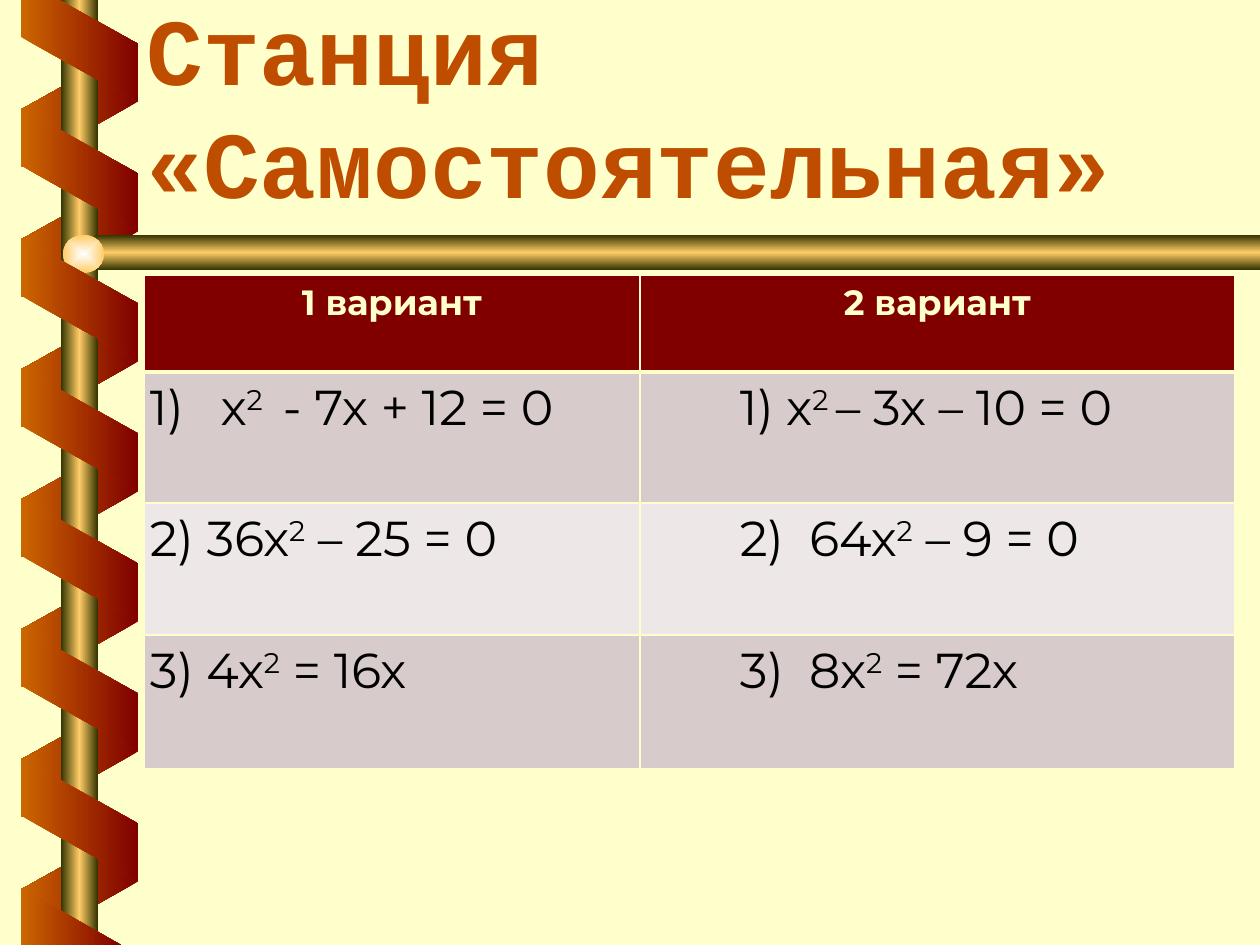
from lxml import etree
from pptx import Presentation
from pptx.dml.color import RGBColor
from pptx.enum.shapes import MSO_SHAPE as SHAPE
from pptx.enum.text import MSO_ANCHOR, MSO_AUTO_SIZE, PP_ALIGN
from pptx.oxml import parse_xml
from pptx.oxml.ns import nsdecls, qn
from pptx.util import Pt

CREAM = RGBColor(0xFF, 0xFF, 0xCC)
RUST = RGBColor(0xBF, 0x4D, 0x00)
MAROON = RGBColor(0x80, 0x00, 0x00)
ORANGE = RGBColor(0xCC, 0x66, 0x00)
OLIVE = RGBColor(0x33, 0x33, 0x00)
GOLD = RGBColor(0xFF, 0xCC, 0x66)
WHITE = RGBColor(0xFE, 0xFF, 0xFF)
BLACK = RGBColor(0x00, 0x00, 0x00)
MAUVE = RGBColor(0xD8, 0xCB, 0xCB)
PALE = RGBColor(0xED, 0xE7, 0xE7)

HEADINGS = ("1 вариант", "2 вариант")
# Text between carets is superscript.
EQUATIONS = (
    ("х^2 ^ - 7х + 12 = 0", "1) х^2 ^– 3х – 10 = 0"),
    ("2) 36х^2^ – 25 = 0", "2)  64х^2^ – 9 = 0"),
    ("3) 4х^2^ = 16х", "3)  8х^2^ = 72х"),
)


def px(length):
    return round(length * 914400 / 126)


def write(paragraph, text, font="Montserrat", size=28, color=BLACK,
          bold=False, align=PP_ALIGN.LEFT):
    paragraph.alignment = align
    for index, part in enumerate(text.split("^")):
        run = paragraph.add_run()
        run.text = part
        run.font.name = font
        run.font.size = Pt(size)
        run.font.bold = bold
        run.font.color.rgb = color
        if index % 2:
            run.font._element.set("baseline", "30000")


def paint(shape, colors, angle=0, radial=False):
    """Fill a shape with an evenly spaced gradient and no outline."""
    shape.shadow.inherit = False
    shape.line.fill.background()
    step = 100000 // (len(colors) - 1)
    stops = "".join(
        f'<a:gs pos="{i * step}"><a:srgbClr val="{color}"/></a:gs>'
        for i, color in enumerate(colors))
    if radial:
        course = ('<a:path path="shape"><a:fillToRect l="50000" t="50000" '
                  'r="50000" b="50000"/></a:path>')
    else:
        course = f'<a:lin ang="{angle * 60000}" scaled="1"/>'
    gradient = parse_xml(
        f'<a:gradFill {nsdecls("a")} rotWithShape="0">'
        f'<a:gsLst>{stops}</a:gsLst>{course}</a:gradFill>')
    shape._element.spPr.find(qn("a:ln")).addprevious(gradient)


def add_part(shapes, kind, box, colors, rotation=0, flip=False, adjust=None,
             **gradient):
    part = shapes.add_shape(kind, *map(px, box))
    part.rotation = rotation
    if flip:
        part._element.spPr.find(qn("a:xfrm")).set("flipH", "1")
    if adjust is not None:
        part.adjustments[0] = adjust
    paint(part, colors, **gradient)


def add_ribbon_end(shapes, points):
    start, *rest = [(px(x), px(y)) for x, y in points]
    builder = shapes.build_freeform(*start)
    builder.add_line_segments(rest)
    paint(builder.convert_to_shape(), (ORANGE, MAROON))


def add_spiral(shapes, left, top, height):
    """Draw the ribbon wound around the vertical rod, with the crossbar."""
    band_w, band_h, pitch = 123, 117, 130
    for turn in range(7):
        add_part(shapes, SHAPE.PARALLELOGRAM,
                 (left, top + 47 + turn * pitch, band_w, band_h),
                 (MAROON, ORANGE), rotation=90, flip=True, adjust=0.56)
    rod = (OLIVE, GOLD, OLIVE)
    add_part(shapes, SHAPE.RECTANGLE, (left + 43, top, 37, height), rod)
    add_part(shapes, SHAPE.PENTAGON, (left + 58, top + 235, 1184, 35), rod,
             flip=True, adjust=0.59, angle=90)
    add_part(shapes, SHAPE.OVAL, (left + 45, top + 235, 41, 38),
             (WHITE, GOLD), radial=True)
    for turn in range(6):
        add_part(shapes, SHAPE.PARALLELOGRAM,
                 (left, top + 111 + turn * pitch, band_w, band_h),
                 (ORANGE, MAROON), rotation=270, adjust=0.56)
    edge, right, bottom = left + 3, left + 120, top + height
    add_ribbon_end(shapes, ((edge, top), (edge, top + 37), (right, top + 102),
                            (right, top + 44), (left + 41, top)))
    add_ribbon_end(shapes, ((left + 103, bottom), (edge, bottom - 57),
                            (edge, bottom)))


def place_title(shapes, left, top, width, height):
    title = shapes.title
    title.left, title.top, title.width, title.height = map(
        px, (left, top, width, height))
    frame = title.text_frame
    frame.word_wrap = True
    frame.auto_size = MSO_AUTO_SIZE.SHAPE_TO_FIT_TEXT
    frame.vertical_anchor = MSO_ANCHOR.BOTTOM
    write(frame.paragraphs[0], "Станция «Самостоятельная»",
          font="Courier New", size=54, color=RUST, bold=True)
    shapes._spTree.append(title._element)


def set_cell(cell, fill, side_inset, top_border=1, bottom_border=1):
    cell.fill.solid()
    cell.fill.fore_color.rgb = fill
    cell.margin_left = cell.margin_right = px(side_inset)
    cell.margin_top = cell.margin_bottom = px(6)
    properties = cell._tc.get_or_add_tcPr()
    borders = {"L": 1, "R": 1, "T": top_border, "B": bottom_border}
    for index, (side, width) in enumerate(borders.items()):
        properties.insert(index, parse_xml(
            f'<a:ln{side} {nsdecls("a")} w="{Pt(width)}"><a:solidFill>'
            f'<a:srgbClr val="{CREAM}"/></a:solidFill></a:ln{side}>'))


def indent(paragraph, margin, first_line=0, numbered=False):
    properties = paragraph._p.get_or_add_pPr()
    properties.set("marL", str(px(margin)))
    properties.set("indent", str(px(first_line)))
    if numbered:
        bullet = etree.SubElement(properties, qn("a:buAutoNum"))
        bullet.set("type", "arabicParenR")


def add_equations(shapes, left, top, widths, heights):
    table = shapes.add_table(len(heights), len(widths), px(left), px(top),
                             px(sum(widths)), px(sum(heights))).table
    table.horz_banding = False
    for column, width in zip(table.columns, widths):
        column.width = px(width)
    for row, height in zip(table.rows, heights):
        row.height = px(height)
    for column, heading in enumerate(HEADINGS):
        cell = table.cell(0, column)
        set_cell(cell, MAROON, 13, bottom_border=3)
        write(cell.text_frame.paragraphs[0], heading, size=20, color=CREAM,
              bold=True, align=PP_ALIGN.CENTER)
    for row, pair in enumerate(EQUATIONS, 1):
        for column, equation in enumerate(pair):
            cell = table.cell(row, column)
            set_cell(cell, MAUVE if row % 2 else PALE, 6,
                     top_border=3 if row == 1 else 1)
            paragraph = cell.text_frame.paragraphs[0]
            if column == 1:
                indent(paragraph, 94)
            elif row == 1:
                indent(paragraph, 71, -71, numbered=True)
            write(paragraph, equation)


def main():
    deck = Presentation()
    deck.slide_width, deck.slide_height = px(1260), px(945)
    slide = deck.slides.add_slide(deck.slide_layouts[5])
    slide.background.fill.solid()
    slide.background.fill.fore_color.rgb = CREAM
    add_spiral(slide.shapes, 18, 0, 945)
    place_title(slide.shapes, 134, 26, 1095, 198)
    add_equations(slide.shapes, 144, 275, (496, 595), (97, 131, 132, 134))
    deck.save("out.pptx")


if __name__ == "__main__":
    main()
